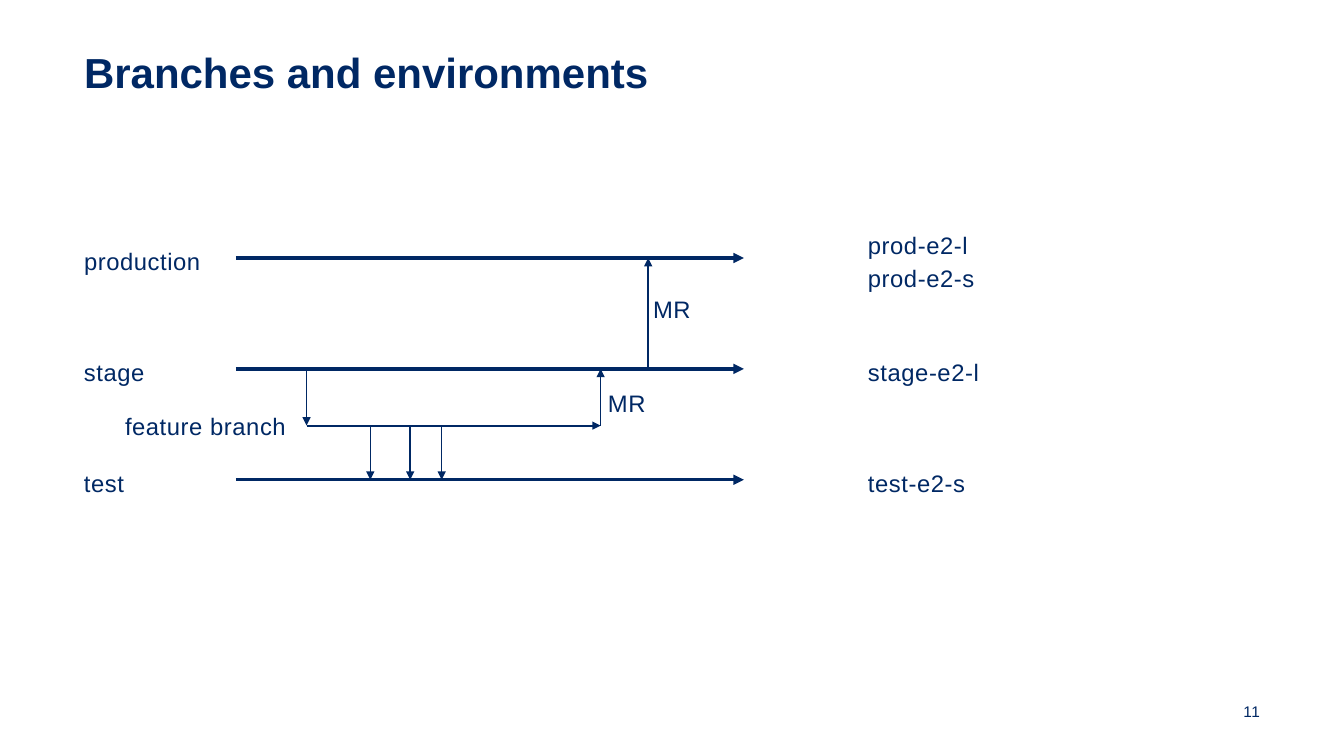
from dataclasses import dataclass

from lxml.etree import SubElement
from pptx import Presentation
from pptx.dml.color import RGBColor
from pptx.enum.shapes import MSO_CONNECTOR
from pptx.enum.text import MSO_ANCHOR, PP_ALIGN
from pptx.oxml.ns import qn
from pptx.slide import Slide
from pptx.text.text import _Paragraph as Paragraph
from pptx.util import Pt


@dataclass(frozen=True)
class Theme:
    navy: RGBColor = RGBColor(0x00, 0x28, 0x64)
    font: str = "Arial"
    title_size: float = 30
    label_size: float = 17
    number_size: float = 11
    line_spacing: float = 1.14
    tracking: float = 0.4
    lane_weight: float = 2.5
    branch_weight: float = 1.5
    merge_weight: float = 1


@dataclass(frozen=True)
class Label:
    text: str
    left: float
    middle: float
    width: float


@dataclass(frozen=True)
class Lane:
    branch: str
    branch_width: float
    environments: str
    environments_width: float


@dataclass(frozen=True)
class Arrow:
    start: tuple[float, float]
    end: tuple[float, float]
    weight: float


THEME = Theme()
MARGIN = 60
ENVIRONMENT_LEFT = 620
LANE_LEFT, LANE_RIGHT = 168.5, 531.4
LANE_TOP, LANE_STEP = 184.3, 79.2
LINE_HEIGHT = 22

LANES = [
    Lane("production", 85, "prod-e2-l\nprod-e2-s", 78),
    Lane("stage", 45, "stage-e2-l", 82),
    Lane("test", 31, "test-e2-s", 72),
]
PRODUCTION_Y, STAGE_Y, TEST_Y = (LANE_TOP + LANE_STEP * index for index in range(len(LANES)))
FEATURE_Y = 304
FEATURE_START, FEATURE_END = 219, 429
RELEASE_X = 463
TEST_DEPLOYS = (264.5, 293, 315.5)

LABELS = [
    Label("feature branch", 89.3, 302, 118),
    Label("MR", 466.5, 219, 28.5),
    Label("MR", 434.2, 286, 28.5),
]
ARROWS = [
    Arrow((FEATURE_START, FEATURE_Y), (FEATURE_END, FEATURE_Y), THEME.branch_weight),
    Arrow((FEATURE_START, STAGE_Y), (FEATURE_START, FEATURE_Y), THEME.merge_weight),
    Arrow((FEATURE_END, FEATURE_Y), (FEATURE_END, STAGE_Y), THEME.merge_weight),
    Arrow((RELEASE_X, STAGE_Y), (RELEASE_X, PRODUCTION_Y), THEME.merge_weight),
    *(Arrow((x, FEATURE_Y), (x, TEST_Y), THEME.merge_weight) for x in TEST_DEPLOYS),
]


def write(para: Paragraph, text: str, *, size: float, bold: bool = False,
          align: PP_ALIGN = PP_ALIGN.LEFT, tracking: float = 0) -> None:
    para.alignment = align
    span = para.add_run()
    span.text = text
    span.font.name = THEME.font
    span.font.size = Pt(size)
    span.font.bold = bold
    span.font.color.rgb = THEME.navy
    if tracking:
        span._r.get_or_add_rPr().set("spc", str(round(tracking * 100)))


def clear_insets(frame) -> None:
    frame.margin_left = frame.margin_top = frame.margin_right = frame.margin_bottom = 0
    frame.word_wrap = True


def add_title(page: Slide, text: str) -> None:
    title = page.shapes.title
    title.left, title.top, title.width, title.height = Pt(MARGIN), Pt(33), Pt(840), Pt(36)
    clear_insets(title.text_frame)
    title.text_frame.vertical_anchor = MSO_ANCHOR.MIDDLE
    write(title.text_frame.paragraphs[0], text, size=THEME.title_size, bold=True)


def add_text(page: Slide, text: str, left: float, top: float, width: float, height: float, *,
             size: float = THEME.label_size, align: PP_ALIGN = PP_ALIGN.LEFT) -> None:
    box = page.shapes.add_textbox(Pt(left), Pt(top), Pt(width), Pt(height))
    frame = box.text_frame
    clear_insets(frame)
    for index, line in enumerate(text.split("\n")):
        para = frame.add_paragraph() if index else frame.paragraphs[0]
        para.line_spacing = THEME.line_spacing
        write(para, line, size=size, align=align, tracking=THEME.tracking)


def add_label(page: Slide, label: Label) -> None:
    """Place a label so that its lines are centred on its middle height."""
    height = LINE_HEIGHT * len(label.text.split("\n"))
    add_text(page, label.text, label.left, label.middle - height / 2, label.width, height)


def add_arrow(page: Slide, arrow: Arrow) -> None:
    line = page.shapes.add_connector(
        MSO_CONNECTOR.STRAIGHT, *(Pt(value) for value in arrow.start + arrow.end))
    line.line.color.rgb = THEME.navy
    line.line.width = Pt(arrow.weight)
    SubElement(line.line._get_or_add_ln(), qn("a:tailEnd"), type="triangle")
    SubElement(line._element.spPr, qn("a:effectLst"))


def add_lane(page: Slide, lane: Lane, y: float) -> None:
    add_label(page, Label(lane.branch, MARGIN, y, lane.branch_width))
    add_arrow(page, Arrow((LANE_LEFT, y), (LANE_RIGHT, y), THEME.lane_weight))
    add_label(page, Label(lane.environments, ENVIRONMENT_LEFT, y, lane.environments_width))


def main() -> None:
    deck = Presentation()
    deck.slide_width, deck.slide_height = Pt(960), Pt(540)
    page = deck.slides.add_slide(deck.slide_layouts[5])
    add_title(page, "Branches and environments")
    add_text(page, "11", 841, 499.7, 59, 11.5, size=THEME.number_size, align=PP_ALIGN.RIGHT)
    for lane, y in zip(LANES, (PRODUCTION_Y, STAGE_Y, TEST_Y)):
        add_lane(page, lane, y)
    for arrow in ARROWS:
        add_arrow(page, arrow)
    for label in LABELS:
        add_label(page, label)
    deck.save("out.pptx")


if __name__ == "__main__":
    main()
